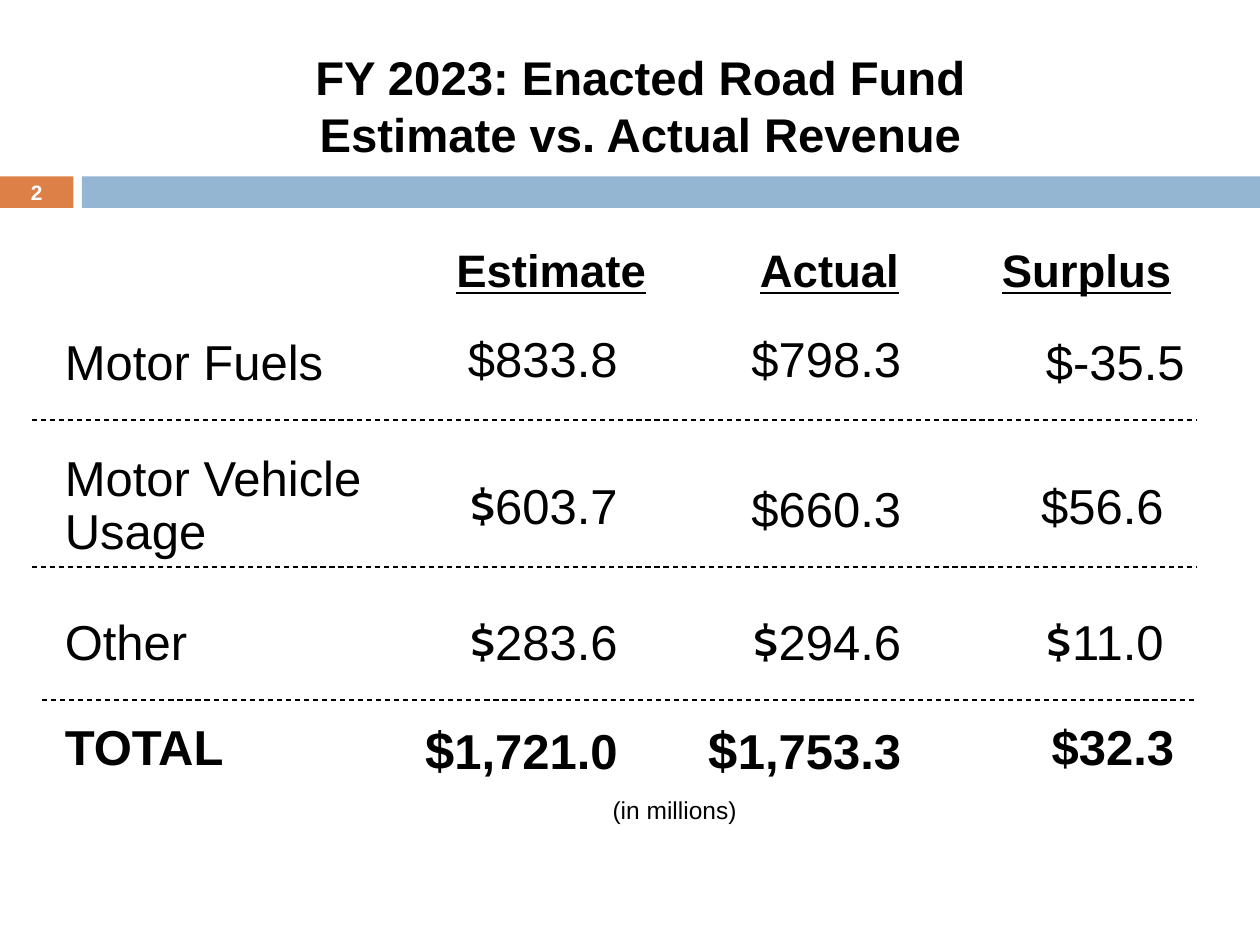
from lxml import etree
from pptx import Presentation
from pptx import util as u
from pptx.dml.color import RGBColor
from pptx.enum import dml, shapes, text
from pptx.oxml import ns

Pt = u.Pt
COLORS = {"ink": "000000", "paper": "FFFFFF", "orange": "DD8047", "blue": "94B6D2"}
ALIGN = {"l": text.PP_ALIGN.LEFT, "c": text.PP_ALIGN.CENTER, "r": text.PP_ALIGN.RIGHT}


class Deck:
    """Hold the style and the current slide, and add elements in points."""

    font = "Arial"

    def __init__(self, width, height):
        self.prs = Presentation()
        self.prs.slide_width, self.prs.slide_height = Pt(width), Pt(height)
        self.slide = self.prs.slides.add_slide(self.prs.slide_layouts[6])

    def color(self, name):
        return RGBColor.from_string(COLORS[name])

    def bar(self, x, y, w, h, color):
        sp = self.slide.shapes.add_shape(
            shapes.MSO_SHAPE.RECTANGLE, Pt(x), Pt(y), Pt(w), Pt(h))
        sp.shadow.inherit = False
        sp.fill.solid()
        sp.fill.fore_color.rgb = self.color(color)
        sp.line.fill.background()

    def rule(self, x1, x2, y):
        sp = self.slide.shapes.add_connector(
            shapes.MSO_CONNECTOR.STRAIGHT, Pt(x1), Pt(y), Pt(x2), Pt(y))
        sp.line.color.rgb = self.color("ink")
        sp.line.width = Pt(0.75)
        sp.line.dash_style = dml.MSO_LINE.DASH
        etree.SubElement(sp._element.spPr, ns.qn("a:effectLst"))

    def text(self, x, y, w, h, words, size=28, align="l", bold=False,
             underline=False, color="ink", wrap=True, spacing=None, sign=None):
        sp = self.slide.shapes.add_textbox(Pt(x), Pt(y), Pt(w), Pt(h))
        tf = sp.text_frame
        tf.word_wrap = wrap
        tf.auto_size = text.MSO_AUTO_SIZE.SHAPE_TO_FIT_TEXT
        p = tf.paragraphs[0]
        p.alignment = ALIGN[align]
        p.line_spacing = spacing
        p.font.bold, p.font.underline = bold, underline
        p.font.color.rgb = self.color(color)
        if sign:
            for part, style in (("$", sign), (words, (self.font, size))):
                r = p.add_run()
                r.text = part
                r.font.name, r.font.size = style[0], Pt(style[1])
        else:
            p.text = words
            p.font.name, p.font.size = self.font, Pt(size)
        return tf

    def save(self):
        self.prs.save("out.pptx")


def main():
    deck = Deck(720, 540)
    deck.bar(0, 100.8, 42, 18, "orange")
    deck.bar(46.8, 100.8, 673.2, 18, "blue")

    deck.text(12, 24, 708, 75, "FY 2023: Enacted Road Fund\nEstimate vs. Actual Revenue",
              size=27, align="c", bold=True)
    for x, w, heading in ((252, 126, "Estimate"), (396, 156, "Actual"), (549, 144, "Surplus")):
        deck.text(x, 135, w, 39, heading, size=26, align="c", bold=True, underline=True)

    deck.text(30, 186, 164, 41, "Motor Fuels", wrap=False)
    deck.text(30, 256, 192, 68, "Motor Vehicle\nUsage", spacing=0.9)
    deck.text(30, 346, 86, 41, "Other", wrap=False)
    deck.text(30, 406, 107, 41, "TOTAL", wrap=False, bold=True)

    cabin, large = ("Cabin", 28), ("Arial", 30)
    amounts = (
        (234, 184, "$833.8", None), (396, 184, "$798.3", None), (558, 186, "$-35.5", None),
        (234, 268, "603.7", cabin), (396, 270, "$660.3", None), (546, 268, "$56.6", None),
        (234, 346, "283.6", cabin), (396, 346, "294.6", cabin), (546, 346, "11.0", cabin),
    )
    for x, y, amount, sign in amounts:
        deck.text(x, y, 126, 41, amount, align="r", sign=sign)
    for x, total, sign in ((234, "1,721.0", large), (396, "1,753.3", large), (552, "$32.3", None)):
        deck.text(x, 406, 126, 44 if sign else 41, total, align="r", bold=True, sign=sign)

    for x, y in ((18, 240), (18, 324), (24, 400)):
        deck.rule(x, 684, y)
    deck.text(289.5, 451, 192, 24, "(in millions)", size=14, align="c")

    tf = deck.text(0, 100, 42, 19.5, "2", size=11.9, align="c", bold=True, color="paper")
    tf.auto_size = text.MSO_AUTO_SIZE.NONE
    tf.vertical_anchor = text.MSO_ANCHOR.MIDDLE
    deck.save()


if __name__ == "__main__":
    main()
